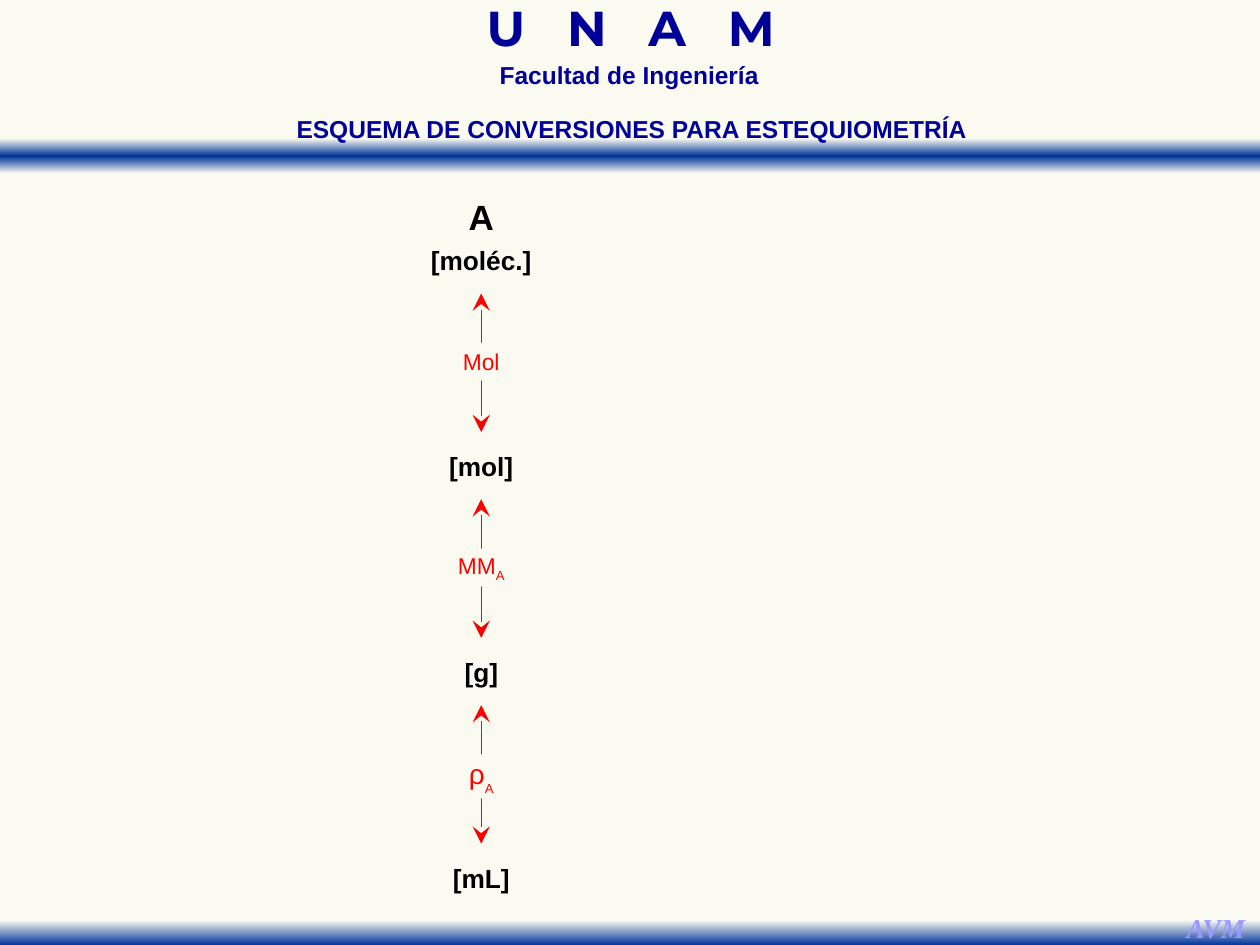
import pptx
import pptx.util
import pptx.dml.color
import pptx.enum.dml
import pptx.enum.shapes
import pptx.enum.text
import pptx.oxml.ns
import lxml.etree

Pt = pptx.util.Pt
qn = pptx.oxml.ns.qn

THEME = {
    "paper": "FAFAF0", "fade": "FAFAF2", "band": "003399",
    "heading": "000099", "unit": "000000", "factor": "FF0000", "sign": "9999FF",
    "font": "Arial", "logo_font": "Montserrat", "sign_font": "Times New Roman",
    "logo_size": 28, "heading_size": 14, "sign_size": 15.6,
    "substance_size": 20, "unit_size": 15, "factor_size": 13, "rho_size": 16,
}

TITLE = "ESQUEMA DE CONVERSIONES PARA ESTEQUIOMETRÍA"
SCHOOL = "Facultad de Ingeniería"
LETTERS = [("U N A ", 8), ("M", 0)]
SIGNATURE = "AVM"
SUBSTANCE = "A"
UNITS = [("[moléc.]", 73), ("[mol]", 52), ("[g]", 34), ("[mL]", 47.5)]
FACTORS = [
    {"main": "Mol", "size": "factor_size", "box": (26.6, 21.6), "drop": 58},
    {"main": "MM", "sub": "A", "base": -25, "size": "factor_size", "box": (34, 21.6), "drop": 58},
    {"main": "ρ", "sub": "A", "base": -40, "size": "rho_size", "box": (20, 25.2), "drop": 59.8},
]
BANDS = [
    (79.2, [(0, "fade"), (50, "band"), (100, "fade")]),
    (520.2, [(28, "fade"), (100, "band")]),
]

WIDTH, HEIGHT = 720, 540
BAND_HEIGHT = 20
AXIS_X = 275
FIRST_UNIT_Y, UNIT_STEP, UNIT_HEIGHT = 148.7, 117.6, 25.2
ARROW_START, ARROW_END = 19, 98.2


def color(name):
    return pptx.dml.color.RGBColor.from_string(THEME[name])


def place(sp, left, top, width, height):
    sp.left, sp.top, sp.width, sp.height = Pt(left), Pt(top), Pt(width), Pt(height)


def setup_text(sp, inset=None, wrap=False, spacing=None):
    tf = sp.text_frame
    tf.word_wrap = wrap
    tf.auto_size = pptx.enum.text.MSO_AUTO_SIZE.NONE
    tf.vertical_anchor = pptx.enum.text.MSO_ANCHOR.MIDDLE
    side, edge = (7.2, 3.6) if inset is None else (inset, inset)
    tf.margin_left = tf.margin_right = Pt(side)
    tf.margin_top = tf.margin_bottom = Pt(edge)
    p = tf.paragraphs[0]
    p.alignment = pptx.enum.text.PP_ALIGN.CENTER
    if spacing:
        p.line_spacing = spacing
    return p


def add_run(p, text, size, ink, font="font", bold=True, italic=False):
    r = p.add_run()
    r.text = text
    r.font.name = THEME[font]
    r.font.size = Pt(THEME[size])
    r.font.bold = bold
    r.font.italic = italic
    r.font.color.rgb = color(ink)
    return r


def add_rect(s, left, top, width, height):
    sp = s.shapes.add_shape(pptx.enum.shapes.MSO_SHAPE.RECTANGLE,
                            Pt(left), Pt(top), Pt(width), Pt(height))
    sp.shadow.inherit = False
    sp.line.fill.background()
    return sp


def add_label(s, center_y, width, height, inset=None):
    sp = add_rect(s, AXIS_X - width / 2, center_y - height / 2, width, height)
    sp.fill.solid()
    sp.fill.fore_color.rgb = color("paper")
    return setup_text(sp, inset)


def add_textbox(s, left, top, width, height, **options):
    sp = s.shapes.add_textbox(Pt(left), Pt(top), Pt(width), Pt(height))
    return setup_text(sp, **options)


def add_band(s, top, stops):
    sp = add_rect(s, 0, top, WIDTH, BAND_HEIGHT)
    sp.fill.gradient()
    sp.fill.gradient_angle = 270
    gs_list = sp._element.spPr.find(qn("a:gradFill")).find(qn("a:gsLst"))
    for gs in list(gs_list):
        gs_list.remove(gs)
    for position, name in stops:
        gs = lxml.etree.SubElement(gs_list, qn("a:gs"), pos=str(position * 1000))
        lxml.etree.SubElement(gs, qn("a:srgbClr"), val=THEME[name])


def add_arrow(s, top, bottom):
    line = s.shapes.add_connector(pptx.enum.shapes.MSO_CONNECTOR.STRAIGHT,
                                  Pt(AXIS_X), Pt(bottom), Pt(AXIS_X), Pt(top))
    line.line.color.rgb = color("factor")
    line.line.width = Pt(0.75)
    ln = line.line._get_or_add_ln()
    for end in ("a:headEnd", "a:tailEnd"):
        lxml.etree.SubElement(ln, qn(end), type="stealth", w="lg", len="lg")
    lxml.etree.SubElement(line._element.spPr, qn("a:effectLst"))


def add_header(s):
    p = add_textbox(s, 219.6, 4.3, 281.5, 31, wrap=True, spacing=0.7)
    for text, tracking in LETTERS:
        r = add_run(p, text, "logo_size", "heading", "logo_font")
        r.font._element.set("spc", str(tracking * 100))
    p = add_textbox(s, 231.1, 35.3, 257, 19.4, wrap=True, spacing=0.7)
    add_run(p, SCHOOL, "heading_size", "heading")
    title = s.shapes.title
    place(title, 143.3, 61.2, 435.6, 24.5)
    add_run(setup_text(title, wrap=True), TITLE, "heading_size", "heading")
    s.shapes._spTree.append(title._element)


def add_scheme(s):
    unit_ys = [FIRST_UNIT_Y + i * UNIT_STEP for i in range(len(UNITS))]
    for (text, width), y in zip(UNITS, unit_ys):
        add_run(add_label(s, y, width, UNIT_HEIGHT), text, "unit_size", "unit")
    for factor, y in zip(FACTORS, unit_ys):
        add_arrow(s, y + ARROW_START, y + ARROW_END)
        p = add_label(s, y + factor["drop"], *factor["box"], inset=2.9)
        add_run(p, factor["main"], factor["size"], "factor", bold=False)
        if "sub" in factor:
            r = add_run(p, factor["sub"], "factor_size", "factor", bold=False)
            r.font._element.set("baseline", str(factor["base"] * 1000))
    add_run(add_label(s, 123.8, 29.5, 31.7), SUBSTANCE, "substance_size", "unit")


def main():
    prs = pptx.Presentation()
    prs.slide_width, prs.slide_height = Pt(WIDTH), Pt(HEIGHT)
    s = prs.slides.add_slide(prs.slide_layouts[5])
    s.background.fill.solid()
    s.background.fill.fore_color.rgb = color("paper")
    for top, stops in BANDS:
        add_band(s, top, stops)
    p = add_textbox(s, 670.3, 517, 49, 26.6)
    add_run(p, SIGNATURE, "sign_size", "sign", "sign_font", italic=True)
    add_scheme(s)
    add_header(s)
    prs.save("out.pptx")


if __name__ == "__main__":
    main()
